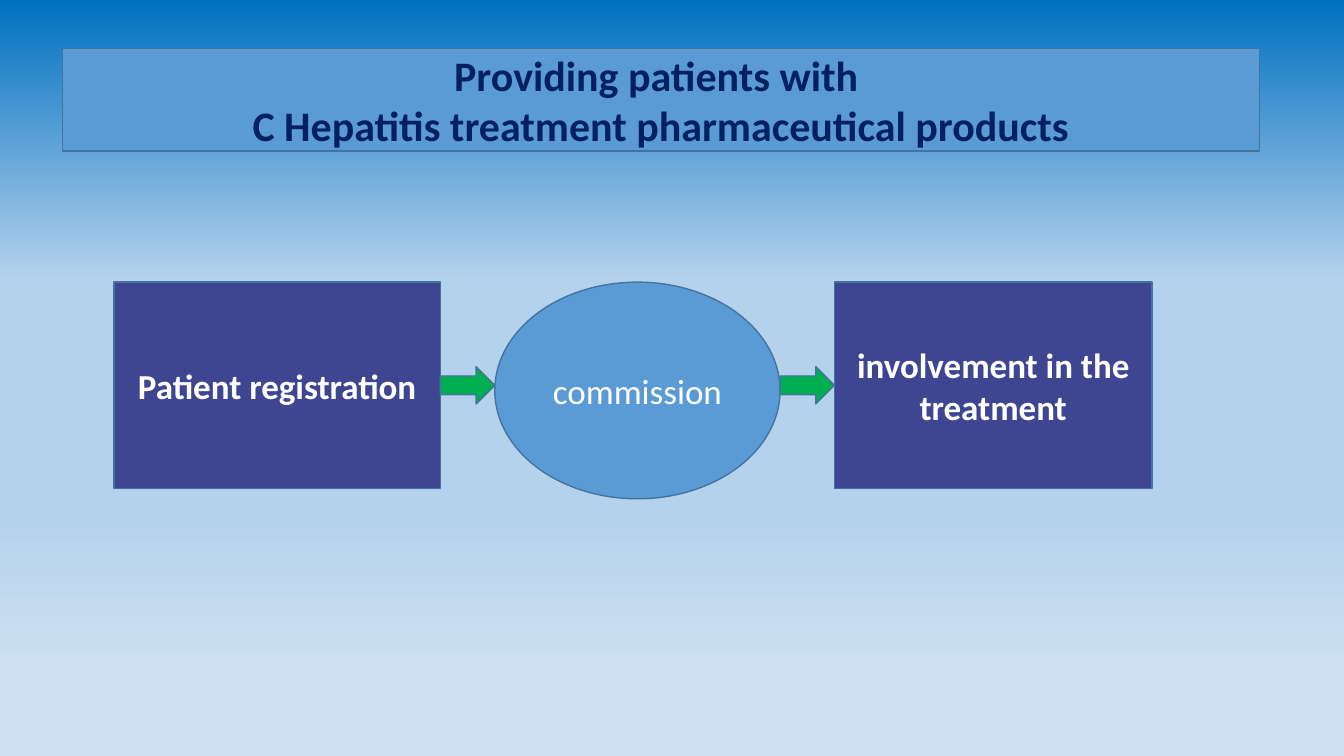
from lxml import etree
from pptx import Presentation
from pptx.dml.color import RGBColor
from pptx.enum import shapes, text
from pptx.oxml import ns
from pptx.util import Cm, Pt

NAVY = RGBColor(0x00, 0x20, 0x60)
WHITE = RGBColor(0xFF, 0xFF, 0xFF)
BLUE = RGBColor(0x5B, 0x9B, 0xD5)
INDIGO = RGBColor(0x3E, 0x46, 0x92)
GREEN = RGBColor(0x00, 0xB0, 0x50)
OUTLINE = RGBColor(0x43, 0x73, 0x9E)
SKY_TOP = RGBColor(0x00, 0x70, 0xC0)
SKY_MIDDLE = RGBColor(0xB5, 0xD2, 0xEC)
SKY_BOTTOM = RGBColor(0xCE, 0xE1, 0xF2)
SKY = [(0, SKY_TOP), (37, SKY_MIDDLE), (68, SKY_MIDDLE), (90, SKY_BOTTOM)]

RECT = shapes.MSO_SHAPE.RECTANGLE
OVAL = shapes.MSO_SHAPE.OVAL
ARROW = shapes.MSO_SHAPE.RIGHT_ARROW

# kind, width, height, fill, label, bold
STEPS = [
    (RECT, 8.23, 5.2, INDIGO, "Patient registration", True),
    (OVAL, 7.19, 5.46, BLUE, "commission", False),
    (RECT, 8.0, 5.2, INDIGO, "involvement in the treatment", True),
]


def paint_background(slide):
    """Fill the slide with a top-to-bottom gradient of several stops."""
    fill = slide.background.fill
    fill.gradient()
    fill.gradient_angle = 270
    stops = slide.element.find(".//" + ns.qn("a:gsLst"))
    for stop in list(stops):
        stops.remove(stop)
    for percent, color in SKY:
        stop = etree.SubElement(stops, ns.qn("a:gs"), pos=str(percent * 1000))
        etree.SubElement(stop, ns.qn("a:srgbClr"), val=str(color))


def add_block(slide, kind, left, top, width, height, fill):
    sp = slide.shapes.add_shape(kind, Cm(left), Cm(top), Cm(width), Cm(height))
    sp.shadow.inherit = False
    sp.fill.solid()
    sp.fill.fore_color.rgb = fill
    sp.line.color.rgb = OUTLINE
    sp.line.width = Pt(1)
    return sp


def write(sp, lines, size, color, bold):
    tf = sp.text_frame
    tf.word_wrap = True
    tf.vertical_anchor = text.MSO_ANCHOR.MIDDLE
    tf.text = "\n".join(lines)
    for p in tf.paragraphs:
        p.alignment = text.PP_ALIGN.CENTER
        for r in p.runs:
            r.font.name = "Calibri"
            r.font.size = Pt(size)
            r.font.bold = bold
            r.font.color.rgb = color


def add_title(slide, left, top, width, height):
    sp = add_block(slide, RECT, left, top, width, height, BLUE)
    lines = ["Providing patients with ",
             "C Hepatitis treatment pharmaceutical products"]
    write(sp, lines, 30, NAVY, True)


def add_flow(slide, left, top, height, gap=1.37, arrow_height=0.94):
    """Place the steps in a row, with an arrow filling each gap."""
    arrow_top = top + (height - arrow_height) / 2
    for i, (kind, width, step_height, fill, label, bold) in enumerate(STEPS):
        if i:
            add_block(slide, ARROW, left, arrow_top, gap, arrow_height, GREEN)
            left += gap
        sp = add_block(slide, kind, left, top, width, step_height, fill)
        write(sp, [label], 25, WHITE, bold)
        left += width


def main():
    prs = Presentation()
    prs.slide_width, prs.slide_height = Cm(33.87), Cm(19.05)
    slide = prs.slides.add_slide(prs.slide_layouts[6])
    paint_background(slide)
    add_title(slide, 1.57, 1.22, 30.18, 2.59)
    add_flow(slide, 2.87, 7.11, 5.2)
    prs.save("out.pptx")


if __name__ == "__main__":
    main()
